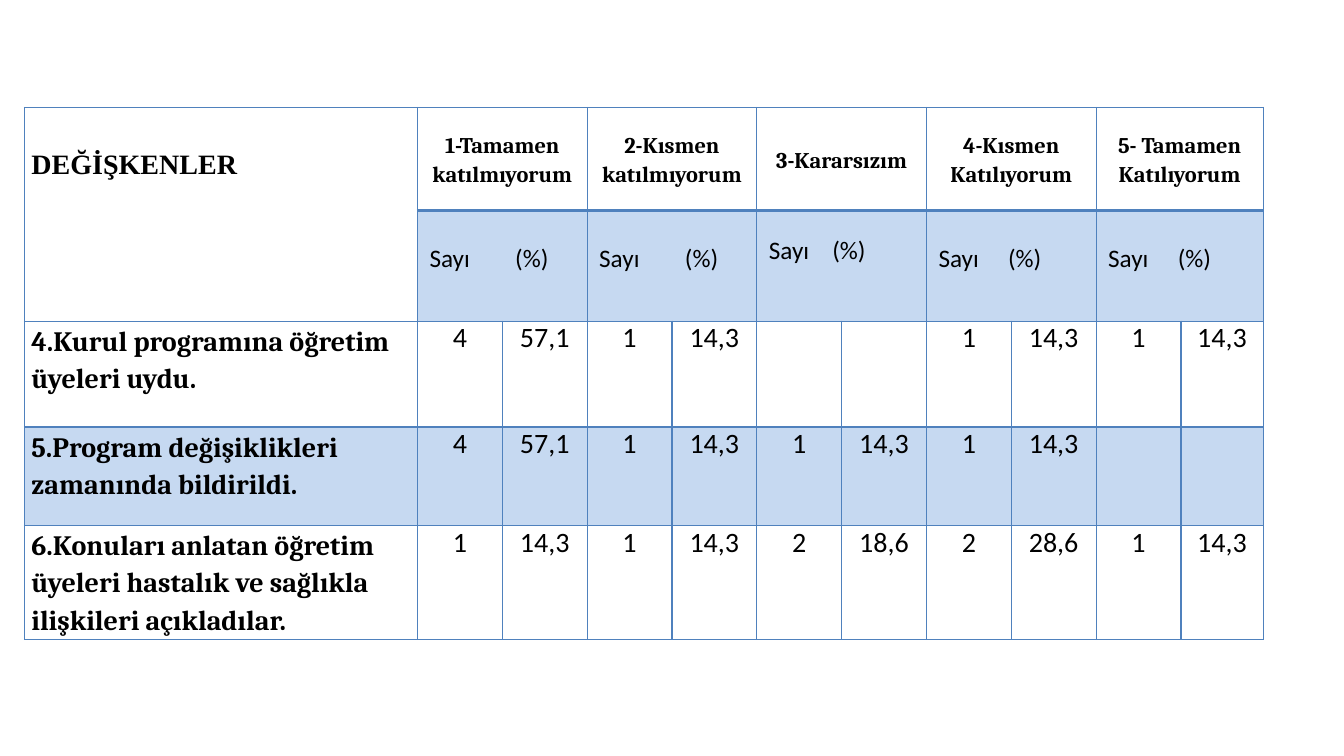
from lxml import etree
from pptx import Presentation
from pptx.dml.color import RGBColor
from pptx.enum.text import MSO_ANCHOR, PP_ALIGN
from pptx.oxml.ns import qn
from pptx.util import Inches, Pt

LEFT, CENTER = PP_ALIGN.LEFT, PP_ALIGN.CENTER
TOP, MIDDLE = MSO_ANCHOR.TOP, MSO_ANCHOR.MIDDLE

COLORS = {"ink": "000000", "rule": "4F81BD", "band": "C6D9F1"}
GRID_COLUMNS, GRID_ROWS = 160, 90
THIN, THICK = 1, 2.25

ANSWERS = [
    ("1-Tamamen katılmıyorum", 0.85),
    ("2-Kısmen katılmıyorum", 0.85),
    ("3-Kararsızım", 0.63),
    ("4-Kısmen Katılıyorum", 0.69),
    ("5- Tamamen Katılıyorum", 0.69),
]
STATEMENTS = [
    ("4.Kurul programına öğretim üyeleri uydu.",
     ["4", "57,1", "1", "14,3", "", "", "1", "14,3", "1", "14,3"]),
    ("5.Program değişiklikleri zamanında bildirildi.",
     ["4", "57,1", "1", "14,3", "1", "14,3", "1", "14,3", "", ""]),
    ("6.Konuları anlatan öğretim üyeleri hastalık ve sağlıkla ilişkileri açıkladılar.",
     ["1", "14,3", "1", "14,3", "2", "18,6", "2", "28,6", "1", "14,3"]),
]
COLUMN_WIDTHS = [46.8] + [10.1] * 9 + [9.8]
ROW_HEIGHTS = [12.25, 13.2, 12.6, 11.76, 13.56]


class SurveySlide:
    def __init__(self, deck):
        self.unit_x = deck.slide_width / GRID_COLUMNS
        self.unit_y = deck.slide_height / GRID_ROWS
        self.slide = deck.slides.add_slide(deck.slide_layouts[6])

    def x(self, columns):
        return round(columns * self.unit_x)

    def y(self, rows):
        return round(rows * self.unit_y)

    def table(self, left, top, widths, heights):
        table = self.slide.shapes.add_table(
            len(heights), len(widths), self.x(left), self.y(top),
            self.x(sum(widths)), self.y(sum(heights))).table
        table.first_row = table.horz_banding = False
        for column, width in zip(table.columns, widths):
            column.width = self.x(width)
        for row, height in zip(table.rows, heights):
            row.height = self.y(height)
        return table

    def frame(self, cell, band=False, top=THIN, bottom=THIN):
        properties = cell._tc.get_or_add_tcPr()
        for side, points in (("L", THIN), ("R", THIN), ("T", top), ("B", bottom)):
            line = etree.SubElement(properties, qn(f"a:ln{side}"), w=str(Pt(points)))
            fill = etree.SubElement(line, qn("a:solidFill"))
            etree.SubElement(fill, qn("a:srgbClr"), val=COLORS["rule"])
        if band:
            cell.fill.solid()
            cell.fill.fore_color.rgb = RGBColor.from_string(COLORS["band"])
        else:
            cell.fill.background()

    def label(self, cell, text, font, size, bold=False, align=LEFT,
              anchor=TOP, spacing=1.15, insets=(0.07, 0, 0.07, 0)):
        cell.margin_left, cell.margin_top, cell.margin_right, cell.margin_bottom = map(
            Inches, insets)
        cell.vertical_anchor = anchor
        cell.text_frame.text = text
        paragraph = cell.text_frame.paragraphs[0]
        paragraph.alignment, paragraph.line_spacing = align, spacing
        for run in paragraph.runs:
            run.font.name, run.font.size, run.font.bold = font, Pt(size), bold
            run.font.color.rgb = RGBColor.from_string(COLORS["ink"])
        return paragraph

    def tab_stop(self, paragraph, inches):
        stops = etree.SubElement(paragraph._p.get_or_add_pPr(), qn("a:tabLst"))
        etree.SubElement(stops, qn("a:tab"), pos=str(Inches(inches)), algn="l")


def main():
    deck = Presentation()
    deck.slide_width, deck.slide_height = Inches(13.33), Inches(7.5)
    survey = SurveySlide(deck)
    results = survey.table(2.9, 12.8, COLUMN_WIDTHS, ROW_HEIGHTS)

    for row in range(2):
        survey.frame(results.cell(row, 0))
    variables = results.cell(0, 0)
    variables.merge(results.cell(1, 0))
    survey.label(variables, "DEĞİŞKENLER", "Times New Roman", 20, bold=True,
                 insets=(0.07, 0.37, 0.07, 0))

    for index, (answer, percent_stop) in enumerate(ANSWERS):
        first = 1 + 2 * index
        for column in (first, first + 1):
            survey.frame(results.cell(0, column), bottom=THICK)
            survey.frame(results.cell(1, column), band=True, top=THICK)
        for row in range(2):
            results.cell(row, first).merge(results.cell(row, first + 1))
        survey.label(results.cell(0, first), answer, "Cambria", 16, bold=True,
                     align=CENTER, anchor=MIDDLE)
        lift = 0.16 if answer == "3-Kararsızım" else 0
        units = survey.label(results.cell(1, first), "Sayı\t(%)", "Calibri", 18,
                             anchor=MIDDLE, spacing=Pt(12),
                             insets=(0.12, 0, 0.07, lift))
        survey.tab_stop(units, percent_stop)

    for row, (statement, values) in enumerate(STATEMENTS, start=2):
        for column in range(len(COLUMN_WIDTHS)):
            survey.frame(results.cell(row, column), band=row == 3)
        survey.label(results.cell(row, 0), statement, "Cambria", 20, bold=True)
        for column, value in enumerate(values, start=1):
            survey.label(results.cell(row, column), value, "Calibri", 20,
                         align=CENTER, spacing=1.0)

    deck.save("out.pptx")


if __name__ == "__main__":
    main()
